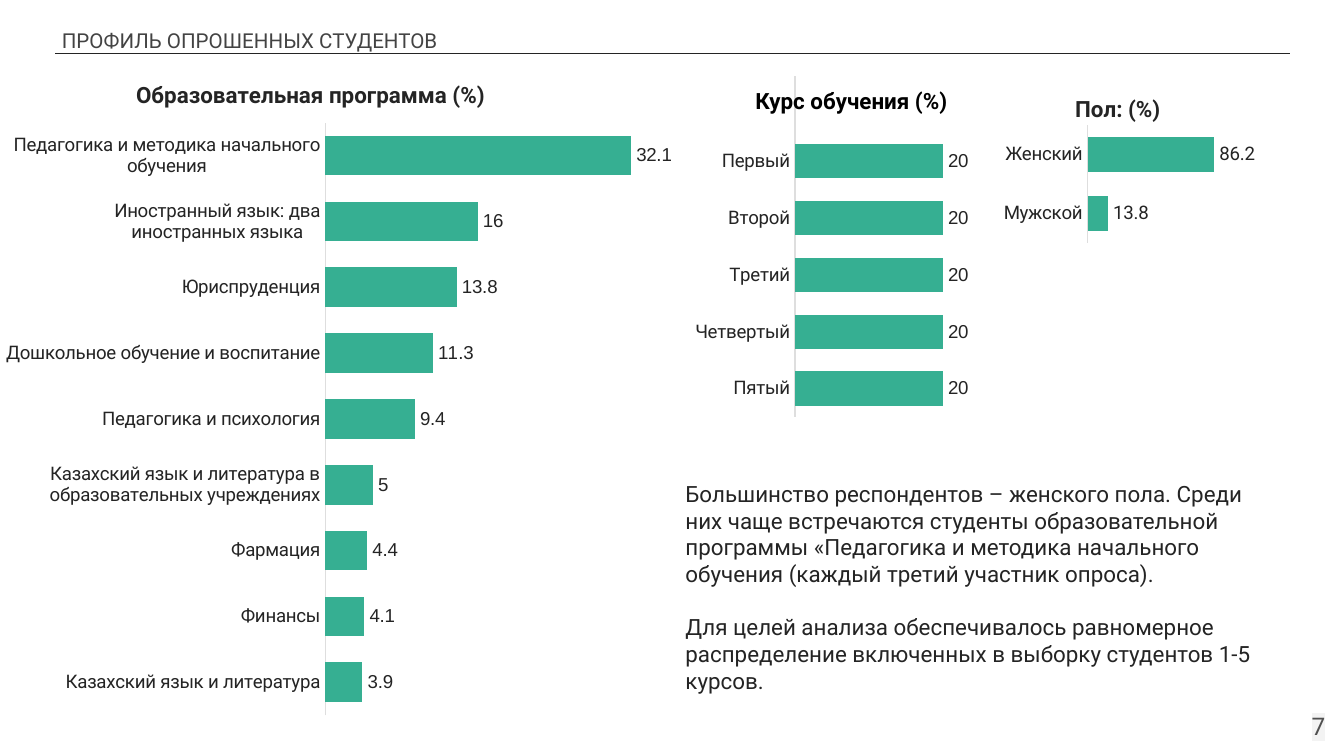
import pptx
import pptx.chart.data
import pptx.dml.color
import pptx.enum.chart
import pptx.enum.shapes
import pptx.enum.text
import pptx.oxml
import pptx.oxml.ns
import pptx.util
from lxml import etree

RGBColor = pptx.dml.color.RGBColor
INK = RGBColor(0x24, 0x24, 0x24)
HEADING = RGBColor(0x43, 0x43, 0x43)
NUMBER = RGBColor(0x50, 0x50, 0x50)
BLACK = RGBColor(0, 0, 0)
GREEN = RGBColor(0x36, 0xAF, 0x92)
AXIS = RGBColor(0xDE, 0xDE, 0xDE)
NUMBER_HIGHLIGHT = "F3F3F3"
WIDTH = 10
HEIGHT = WIDTH * 9 / 16

# Content: boxes are left, top, width, height in percent of the slide
TITLE = "ПРОФИЛЬ ОПРОШЕННЫХ СТУДЕНТОВ"
TITLE_BOX = (3.6, 1.9, 45, 5.9)
BODY = [
    "Большинство респондентов – женского пола. Среди них чаще встречаются студенты "
    "образовательной программы «Педагогика и методика начального обучения "
    "(каждый третий участник опроса).",
    "Для целей анализа обеспечивалось равномерное распределение включенных в выборку "
    "студентов 1-5 курсов.",
]
BODY_BOX = (50, 61.7, 46.4, 30.6)
COURSE_TITLE = "Курс обучения (%)"
COURSE_TITLE_BOX = (53.6, 10.7, 19.5, 5.5)
PAGE = "7"
PAGE_BOX = (93.6, 92.3, 6, 7.7)
RULE = (4.1, 96, 7.1)  # left, right, height on the slide

# Plot areas and title positions are shares of the chart; bars run bottom to top
CHARTS = [
    {"box": (72.9, 10.7, 20.6, 23.3), "plot": (0.39, 0.25, 0.53, 0.67),
     "title": "Пол: (%)", "title_at": (0.33, 0.05), "label_font": "Roboto", "maximum": 100,
     "rows": [("Мужской", 13.8), ("Женский", 86.2)]},
    # The empty top row leaves room for the course title
    {"box": (50, 9.1, 22.9, 47.5), "plot": (0.4, 0.02, 0.6, 0.95),
     "title": None, "label_font": "Arial", "maximum": 25,
     "rows": [(name, 20) for name in
              ("Пятый", "Четвертый", "Третий", "Второй", "Первый")] + [("", None)]},
    {"box": (0.4, 9.1, 49.6, 89.1), "plot": (0.48, 0.08, 0.5, 0.88),
     "title": "Образовательная программа (%)", "title_at": (0.19, 0.01),
     "label_font": "Arial", "maximum": 35,
     "rows": [("Казахский язык и литература", 3.9),
              ("Финансы", 4.1),
              ("Фармация", 4.4),
              ("Казахский язык и литература в образовательных учреждениях", 5),
              ("Педагогика и психология", 9.4),
              ("Дошкольное обучение и воспитание", 11.3),
              ("Юриспруденция", 13.8),
              ("Иностранный язык: два иностранных языка", 16),
              ("Педагогика и методика начального обучения", 32.1)]},
]


def across(percent):
    return pptx.util.Inches(WIDTH * percent / 100)


def down(percent):
    return pptx.util.Inches(HEIGHT * percent / 100)


def place(box):
    left, top, width, height = box
    return across(left), down(top), across(width), down(height)


def set_font(font, size, color, name="Roboto", bold=False):
    font.size = pptx.util.Pt(size)
    font.name = name
    font.bold = bold
    font.color.rgb = color


def write(shape, box, lines, size, color, align="LEFT", bold=False, inset=0.1, gap=0):
    shape.left, shape.top, shape.width, shape.height = place(box)
    frame = shape.text_frame
    frame.text = "\n".join(lines)
    frame.word_wrap = True
    frame.auto_size = pptx.enum.text.MSO_AUTO_SIZE.NONE
    frame.vertical_anchor = pptx.enum.text.MSO_ANCHOR.TOP
    frame.margin_left = frame.margin_right = pptx.util.Inches(0.1)
    frame.margin_top = frame.margin_bottom = pptx.util.Inches(inset)
    for index, paragraph in enumerate(frame.paragraphs):
        paragraph.alignment = getattr(pptx.enum.text.PP_ALIGN, align)
        paragraph.space_before = pptx.util.Pt(gap if index else 0)
        set_font(paragraph.font, size, color, bold=bold)


def set_layout(element, **settings):
    """Fix the position of a chart's plot area or title."""
    for old in element.findall(pptx.oxml.ns.qn("c:layout")):
        element.remove(old)
    fields = "".join(f'<c:{tag} val="{value}"/>' for tag, value in settings.items())
    layout = pptx.oxml.parse_xml(
        f'<c:layout {pptx.oxml.ns.nsdecls("c")}>'
        f"<c:manualLayout>{fields}</c:manualLayout></c:layout>")
    text = element.find(pptx.oxml.ns.qn("c:tx"))
    element.insert(0 if text is None else element.index(text) + 1, layout)


def add_bars(slide, content):
    data = pptx.chart.data.CategoryChartData()
    data.categories = [name for name, value in content["rows"]]
    data.add_series("Series 1", [value for name, value in content["rows"]])
    chart = slide.shapes.add_chart(
        pptx.enum.chart.XL_CHART_TYPE.BAR_CLUSTERED, *place(content["box"]), data).chart
    set_font(chart.font, 10, INK, content["label_font"])
    chart.has_legend = False

    # Axes
    category = chart.category_axis
    category.major_tick_mark = pptx.enum.chart.XL_TICK_MARK.NONE
    category.has_major_gridlines = False
    category.format.line.color.rgb = AXIS
    category.format.line.width = pptx.util.Pt(0.75)
    set_font(category.tick_labels.font, 10, INK)
    value = chart.value_axis
    value.minimum_scale, value.maximum_scale = 0, content["maximum"]
    value.has_major_gridlines = False
    value.visible = False

    # Bars and labels
    plot = chart.plots[0]
    plot.gap_width = 66
    plot.vary_by_categories = False
    fill = plot.series[0].format.fill
    fill.solid()
    fill.fore_color.rgb = GREEN
    plot.has_data_labels = True
    labels = plot.data_labels
    labels.show_value = True
    labels.position = pptx.enum.chart.XL_LABEL_POSITION.OUTSIDE_END
    set_font(labels.font, 10, INK, content["label_font"])
    x, y, w, h = content["plot"]
    area = chart._chartSpace.chart.plotArea
    set_layout(area, layoutTarget="inner", xMode="edge", yMode="edge", x=x, y=y, w=w, h=h)

    # Title
    chart.has_title = bool(content["title"])
    if content["title"]:
        frame = chart.chart_title.text_frame
        frame.text = content["title"]
        set_font(frame.paragraphs[0].font, 12, INK, bold=True)
        x, y = content["title_at"]
        set_layout(chart.chart_title._element, xMode="edge", yMode="edge", x=x, y=y)


def main():
    presentation = pptx.Presentation()
    presentation.slide_width = pptx.util.Inches(WIDTH)
    presentation.slide_height = pptx.util.Inches(HEIGHT)
    slide = presentation.slides.add_slide(presentation.slide_layouts[1])

    # Heading and the rule under it
    write(slide.shapes.title, TITLE_BOX, [TITLE], 11, HEADING)
    left, right, height = RULE
    rule = slide.shapes.add_connector(
        pptx.enum.shapes.MSO_CONNECTOR.STRAIGHT,
        across(left), down(height), across(right), down(height))
    rule.line.color.rgb = INK
    rule.line.width = pptx.util.Pt(0.75)
    etree.SubElement(rule._element.spPr, pptx.oxml.ns.qn("a:effectLst"))

    # Commentary without bullets
    body = slide.placeholders[1]
    write(body, BODY_BOX, BODY, 12, INK, gap=14)
    for paragraph in body.text_frame.paragraphs:
        properties = paragraph._p.get_or_add_pPr()
        properties.set("marL", "0")
        properties.set("indent", "0")
        etree.SubElement(properties, pptx.oxml.ns.qn("a:buNone"))
        # Default run properties come after the bullet setting
        properties.append(properties.find(pptx.oxml.ns.qn("a:defRPr")))

    # Charts, with the course title over its chart
    for content in CHARTS:
        add_bars(slide, content)
    course_title = slide.shapes.add_textbox(*place(COURSE_TITLE_BOX))
    write(course_title, COURSE_TITLE_BOX, [COURSE_TITLE], 12, BLACK, "CENTER", True, 0.05)

    # Highlighted page number
    page = slide.shapes.add_textbox(*place(PAGE_BOX))
    write(page, PAGE_BOX, [PAGE], 13, NUMBER, "RIGHT")
    run = page.text_frame.paragraphs[0].runs[0]
    set_font(run.font, 13, NUMBER)
    run.font.fill._xPr.find(pptx.oxml.ns.qn("a:solidFill")).addnext(pptx.oxml.parse_xml(
        f'<a:highlight {pptx.oxml.ns.nsdecls("a")}>'
        f'<a:srgbClr val="{NUMBER_HIGHLIGHT}"/></a:highlight>'))

    presentation.save("out.pptx")


if __name__ == "__main__":
    main()
